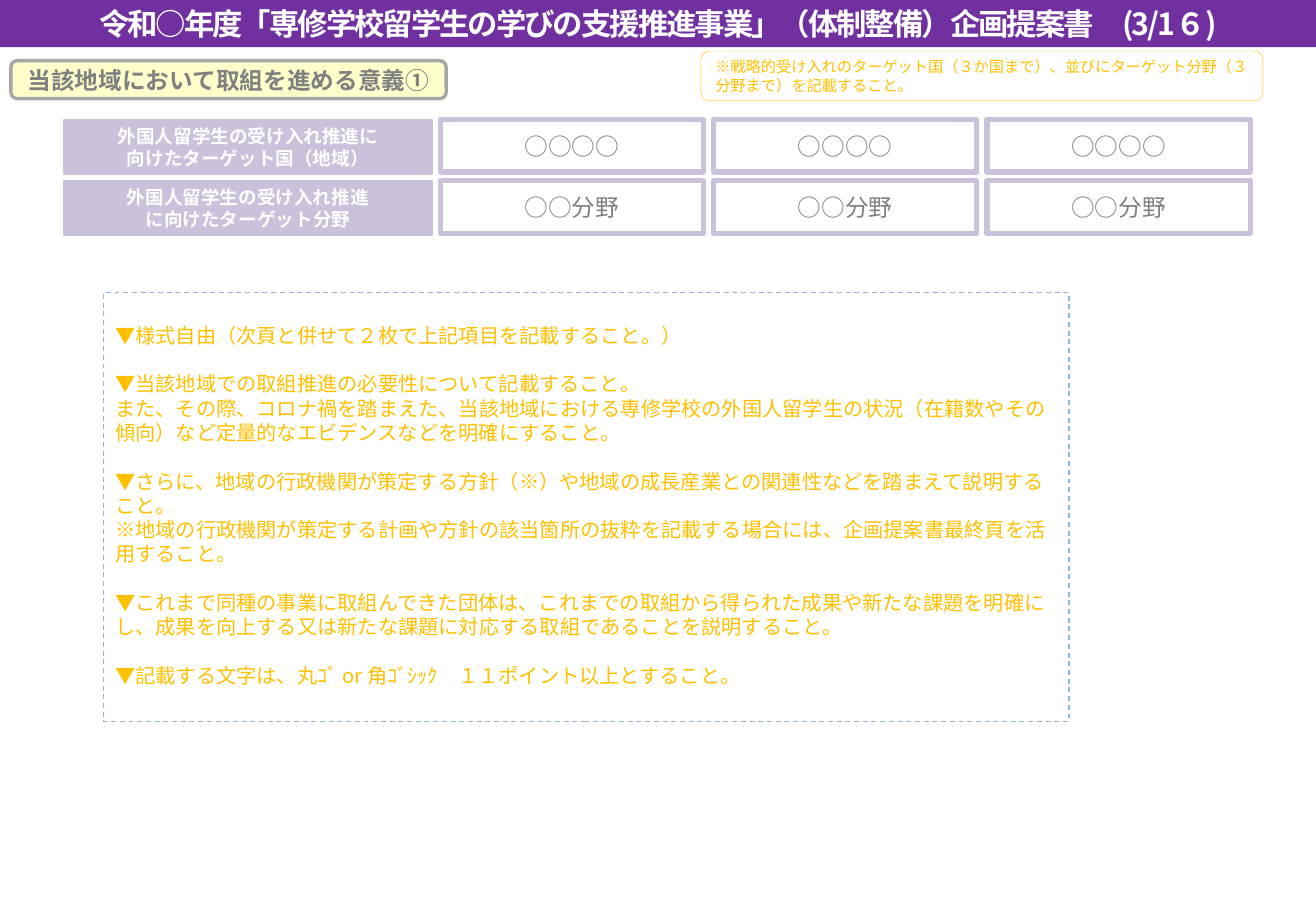
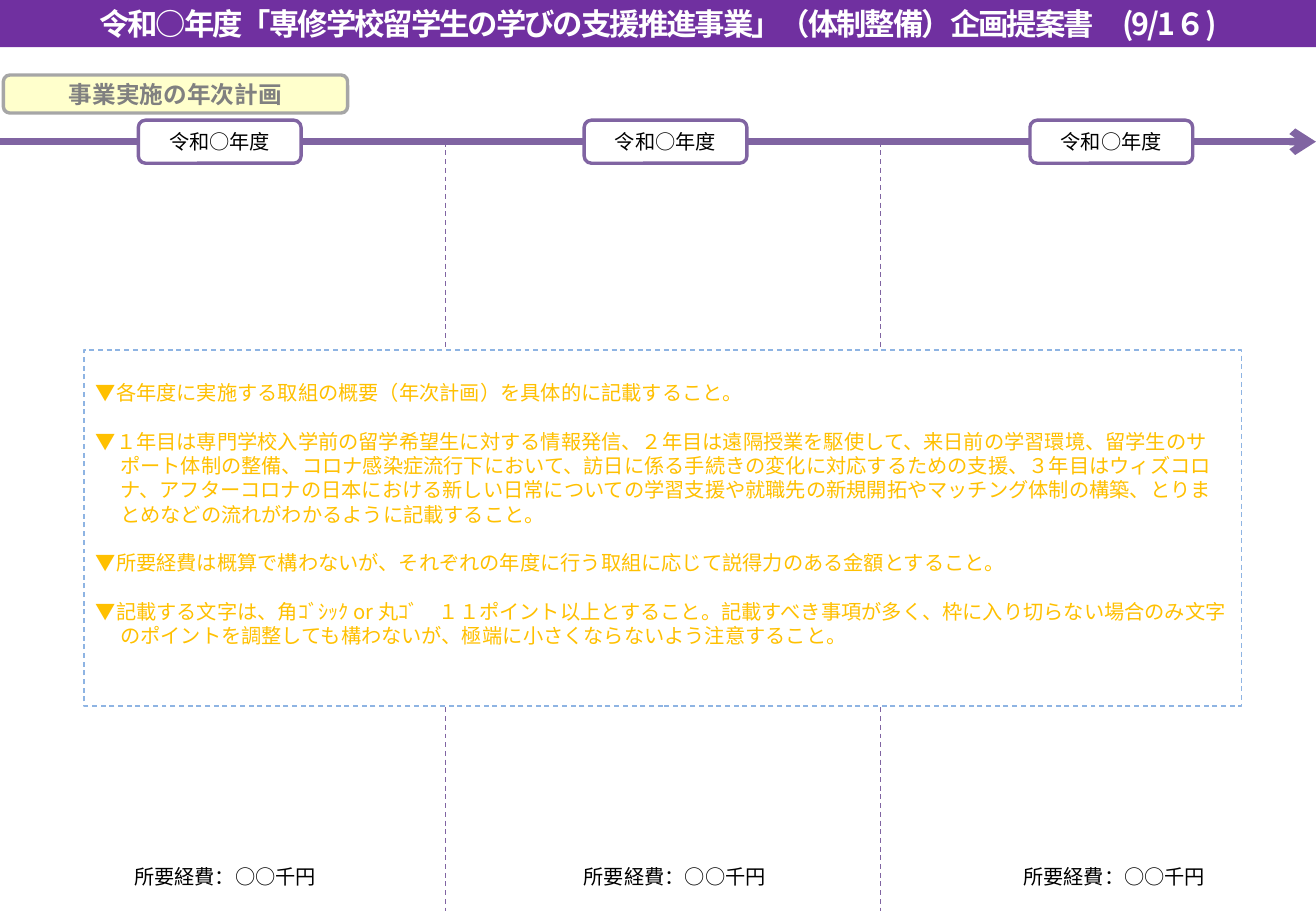
from dataclasses import dataclass

from lxml.etree import SubElement
from pptx import Presentation
from pptx.dml.color import RGBColor
from pptx.enum.dml import MSO_LINE_DASH_STYLE as Dash
from pptx.enum.shapes import MSO_CONNECTOR as Connector, MSO_SHAPE as Preset
from pptx.enum.text import MSO_ANCHOR as Anchor, PP_ALIGN as Align
from pptx.oxml.ns import qn
from pptx.util import Pt

TITLE = "令和○年度「専修学校留学生の学びの支援推進事業」（体制整備）企画提案書　({}/1６)"

SIGNIFICANCE = "当該地域において取組を進める意義①"
TARGET_NOTE = "※戦略的受け入れのターゲット国（３か国まで）、並びにターゲット分野（３分野まで）を記載すること。"
TARGETS = [
    (["外国人留学生の受け入れ推進に", "向けたターゲット国（地域）"], ["○○○○"] * 3),
    (["外国人留学生の受け入れ推進", "に向けたターゲット分野"], ["○○分野"] * 3),
]
# Each inner list is one block of guidance; blocks are set apart by a line.
SIGNIFICANCE_GUIDE = [
    ["▼様式自由（次頁と併せて２枚で上記項目を記載すること。）"],
    ["▼当該地域での取組推進の必要性について記載すること。",
     "また、その際、コロナ禍を踏まえた、当該地域における専修学校の外国人留学生の状況"
     "（在籍数やその傾向）など定量的なエビデンスなどを明確にすること。"],
    ["▼さらに、地域の行政機関が策定する方針（※）や地域の成長産業との関連性などを踏まえて説明すること。",
     "※地域の行政機関が策定する計画や方針の該当箇所の抜粋を記載する場合には、"
     "企画提案書最終頁を活用すること。"],
    ["▼これまで同種の事業に取組んできた団体は、これまでの取組から得られた成果や新たな課題を明確にし、"
     "成果を向上する又は新たな課題に対応する取組であることを説明すること。"],
    ["▼記載する文字は、丸ｺﾞ or 角ｺﾞｼｯｸ　１１ポイント以上とすること。"],
]

PLAN = "事業実施の年次計画"
YEARS = ["令和○年度"] * 3
COSTS = [("所要経費：○○千円", 2, 508.5), ("所要経費：○○千円", 268.5, 509),
         ("所要経費：○○千円", 529, 509)]
YEAR_DIVIDERS = [264, 522]
PLAN_GUIDE = [
    ["▼各年度に実施する取組の概要（年次計画）を具体的に記載すること。"],
    ["▼１年目は専門学校入学前の留学希望生に対する情報発信、２年目は遠隔授業を駆使して、来日前の学習環境、"
     "留学生のサポート体制の整備、コロナ感染症流行下において、訪日に係る手続きの変化に対応するための支援、"
     "３年目はウィズコロナ、アフターコロナの日本における新しい日常についての学習支援や就職先の新規開拓や"
     "マッチング体制の構築、とりまとめなどの流れがわかるように記載すること。"],
    ["▼所要経費は概算で構わないが、それぞれの年度に行う取組に応じて説得力のある金額とすること。"],
    ["▼記載する文字は、角ｺﾞｼｯｸ or 丸ｺﾞ　１１ポイント以上とすること。記載すべき事項が多く、"
     "枠に入り切らない場合のみ文字のポイントを調整しても構わないが、極端に小さくならないよう注意すること。"],
]


@dataclass(frozen=True)
class Theme:
    font: str = "Noto Sans CJK JP"
    latin: str = "Arial"
    white: str = "FFFFFF"
    black: str = "000000"
    band: str = "7030A0"
    heading_fill: str = "FFFFCC"
    heading_line: str = "A6A6A6"
    gray: str = "808080"
    lilac: str = "CCC1DA"
    purple: str = "8064A2"
    amber: str = "FFC000"
    guide_line: str = "8EB4E3"
    title: float = 18
    heading: float = 14
    body: float = 12
    label: float = 11
    note: float = 9
    leading: float = 1.2


THEME = Theme()
WIDTH, HEIGHT = 780, 540


def rgb(code):
    return RGBColor.from_string(code)


def write(shape, lines, size, color, bold=False, align=Align.CENTER, font=THEME.font, spacing=None):
    frame = shape.text_frame
    frame.word_wrap = True
    frame.vertical_anchor = Anchor.MIDDLE
    frame.margin_top = frame.margin_bottom = 0
    frame.text = "\n".join(lines)
    for paragraph in frame.paragraphs:
        paragraph.alignment = align
        paragraph.line_spacing = Pt(size * THEME.leading)
        for run in paragraph.runs:
            run.font.size, run.font.bold, run.font.name = Pt(size), bold, font
            run.font.color.rgb = rgb(color)
            props = run.font._element
            SubElement(props, qn("a:ea")).set("typeface", THEME.font)
            if spacing:
                props.set("spc", str(round(spacing * 100)))


def add_box(slide, area, fill=None, line=None, weight=1, preset=Preset.RECTANGLE):
    box = slide.shapes.add_shape(preset, *map(Pt, area))
    box.shadow.inherit = False
    if fill:
        box.fill.solid()
        box.fill.fore_color.rgb = rgb(fill)
    else:
        box.fill.background()
    if line:
        box.line.color.rgb = rgb(line)
        box.line.width = Pt(weight)
    else:
        box.line.fill.background()
    return box


def add_line(slide, start, end, weight):
    line = slide.shapes.add_connector(Connector.STRAIGHT, *map(Pt, (*start, *end)))
    line.line.color.rgb = rgb(THEME.purple)
    line.line.width = Pt(weight)
    SubElement(line._element.spPr, qn("a:effectLst"))
    return line


def add_heading(slide, area, text):
    heading = add_box(slide, area, THEME.heading_fill, THEME.heading_line, 2, Preset.ROUNDED_RECTANGLE)
    write(heading, [text], THEME.heading, THEME.gray, bold=True)


def add_guide(slide, area, blocks, fill=None, hanging=0):
    """Dashed frame of guidance, with one line of space between blocks."""
    guide = add_box(slide, area, fill, THEME.guide_line, 0.75)
    guide.line.dash_style = Dash.DASH
    write(guide, [line for block in blocks for line in block], THEME.body, THEME.amber, align=Align.LEFT)
    frame = guide.text_frame
    frame.vertical_anchor = Anchor.TOP
    frame.margin_top = Pt(18)
    block_starts = [index == 0 for block in blocks for index in range(len(block))]
    for index, (paragraph, starts) in enumerate(zip(frame.paragraphs, block_starts)):
        if index and starts:
            paragraph.space_before = Pt(THEME.body * THEME.leading)
        if hanging:
            props = paragraph._p.get_or_add_pPr()
            props.set("marL", str(Pt(hanging)))
            props.set("indent", str(-Pt(hanging)))


def add_page(deck, number):
    slide = deck.slides.add_slide(deck.slide_layouts[6])
    band = add_box(slide, (0, 0, WIDTH, 28), THEME.band)
    write(band, [TITLE.format(number)], THEME.title, THEME.white, bold=True, spacing=-1.2)
    return slide


def build_significance(deck):
    slide = add_page(deck, 3)
    add_heading(slide, (6.5, 36, 258, 22.5), SIGNIFICANCE)
    add_guide(slide, (61.2, 173.5, 572.4, 254), SIGNIFICANCE_GUIDE)
    for row, (label, values) in enumerate(TARGETS):
        top = 71 + 36.25 * row
        write(add_box(slide, (38, top, 218, 32), THEME.lilac, THEME.lilac),
              label, THEME.label, THEME.white, bold=True)
        for column, value in enumerate(values):
            cell = add_box(slide, (261 + 162 * column, top, 156, 31), THEME.white, THEME.lilac, 3)
            write(cell, [value], THEME.heading, THEME.gray)
    note = add_box(slide, (415.5, 30.25, 333, 29.5), THEME.white, THEME.amber, 0.25, Preset.ROUNDED_RECTANGLE)
    write(note, [TARGET_NOTE], THEME.note, THEME.amber, align=Align.LEFT)


def build_plan(deck):
    slide = add_page(deck, 9)
    add_heading(slide, (2, 44.5, 204, 22.5), PLAN)
    for cost, left, top in COSTS:
        caption = slide.shapes.add_textbox(*map(Pt, (left, top, 263, 21.6)))
        write(caption, [cost], THEME.body, THEME.black, font=THEME.latin)

    axis = 84
    for x in YEAR_DIVIDERS:
        add_line(slide, (x, axis), (x, HEIGHT), 0.75).line.dash_style = Dash.DASH
    timeline = add_line(slide, (0, axis), (WIDTH, axis), 4.5)
    SubElement(timeline.line._get_or_add_ln(), qn("a:tailEnd")).set("type", "arrow")
    for index, year in enumerate(YEARS):
        marker = add_box(slide, (82 + 264.25 * index, axis - 12.75, 96.5, 25.5),
                         THEME.white, THEME.purple, 2, Preset.ROUNDED_RECTANGLE)
        write(marker, [year], THEME.body, THEME.black)
    add_guide(slide, (49.75, 207.5, 686, 211), PLAN_GUIDE, THEME.white, hanging=14.4)


def main():
    deck = Presentation()
    deck.slide_width, deck.slide_height = Pt(WIDTH), Pt(HEIGHT)
    build_significance(deck)
    build_plan(deck)
    deck.save("out.pptx")


if __name__ == "__main__":
    main()
